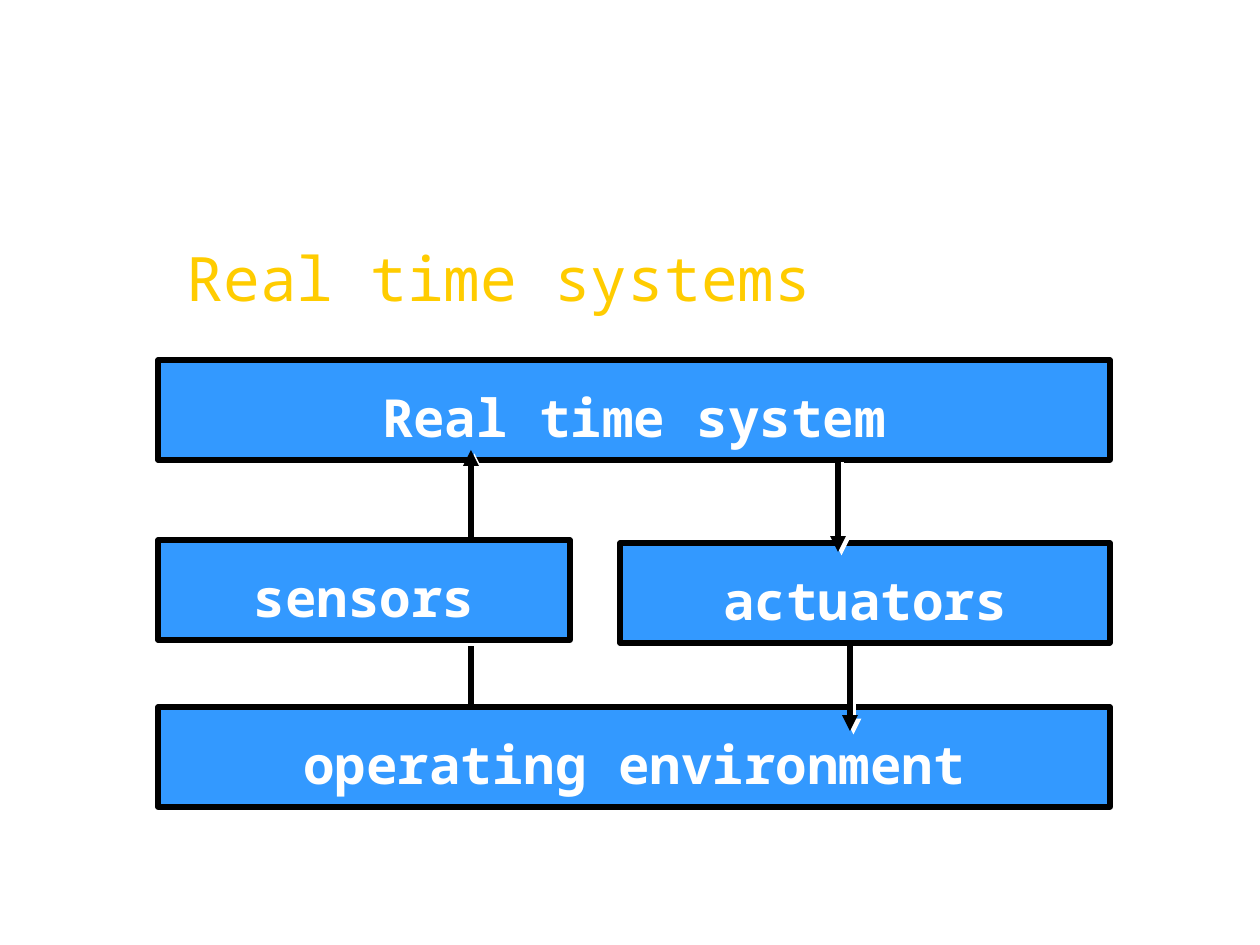
"""Build the real time systems block diagram slide."""
import pptx
import pptx.dml.color
import pptx.enum.shapes
import pptx.enum.text
import pptx.oxml
import pptx.oxml.ns
import pptx.util

PX = 914400 / 126
FONT = "Noto Sans Mono"
BLACK, WHITE, BLUE, GOLD = "000000", "FFFFFF", "3399FF", "FFCC00"
BOX_HEIGHT = 100
TITLE = ("Real time systems", (174, 234, 707, 86))
PARTS = [
    ("box", "Real time system", (158, 360, 952)),
    ("box", "actuators", (620, 543, 490)),
    ("arrow", (471, 707), (471, 619)),
    ("box", "operating environment", (158, 707, 952)),
    ("arrow", (471, 538), (471, 450)),
    ("arrow", (838, 459), (838, 552)),
    ("box", "sensors", (158, 540, 412)),
    ("arrow", (850, 646), (850, 731)),
]
SHADOW = (
    f'<a:effectLst {pptx.oxml.ns.nsdecls("a")}>'
    f'<a:outerShdw dist="35560" dir="2700000" algn="ctr" rotWithShape="0">'
    f'<a:srgbClr val="{WHITE}"/></a:outerShdw></a:effectLst>'
)
ARROWHEAD = f'<a:tailEnd {pptx.oxml.ns.nsdecls("a")} type="triangle"/>'


def emu(*lengths):
    return [round(length * PX) for length in lengths]


def color(value):
    return pptx.dml.color.RGBColor.from_string(value)


def outline(shape):
    shape.line.color.rgb = color(BLACK)
    shape.line.width = pptx.util.Pt(3)
    shape._element.spPr.append(pptx.oxml.parse_xml(SHADOW))


def write(shape, text, size, ink, bold, alignment):
    frame = shape.text_frame
    frame.text = text
    frame.word_wrap = True
    frame.auto_size = pptx.enum.text.MSO_AUTO_SIZE.NONE
    frame.vertical_anchor = pptx.enum.text.MSO_ANCHOR.TOP
    paragraph = frame.paragraphs[0]
    paragraph.alignment = alignment
    font = paragraph.runs[0].font
    font.name, font.size, font.bold = FONT, pptx.util.Pt(size), bold
    font.color.rgb = color(ink)
    return paragraph


def add_box(slide, text, place):
    shape = slide.shapes.add_shape(
        pptx.enum.shapes.MSO_SHAPE.RECTANGLE, *emu(*place, BOX_HEIGHT))
    shape.fill.solid()
    shape.fill.fore_color.rgb = color(BLUE)
    outline(shape)
    paragraph = write(shape, text, 30, WHITE, True, pptx.enum.text.PP_ALIGN.CENTER)
    paragraph.line_spacing = 1.3


def add_arrow(slide, start, end):
    connector = slide.shapes.add_connector(
        pptx.enum.shapes.MSO_CONNECTOR.STRAIGHT, *emu(*start, *end))
    outline(connector)
    connector.line._get_or_add_ln().append(pptx.oxml.parse_xml(ARROWHEAD))


def main():
    presentation = pptx.Presentation()
    presentation.slide_width, presentation.slide_height = emu(1260, 945)
    slide = presentation.slides.add_slide(presentation.slide_layouts[5])
    text, place = TITLE
    title = slide.shapes.title
    title.left, title.top, title.width, title.height = emu(*place)
    write(title, text, 35, GOLD, False, pptx.enum.text.PP_ALIGN.LEFT)
    builders = {"box": add_box, "arrow": add_arrow}
    for kind, *details in PARTS:
        builders[kind](slide, *details)
    presentation.save("out.pptx")


if __name__ == "__main__":
    main()
